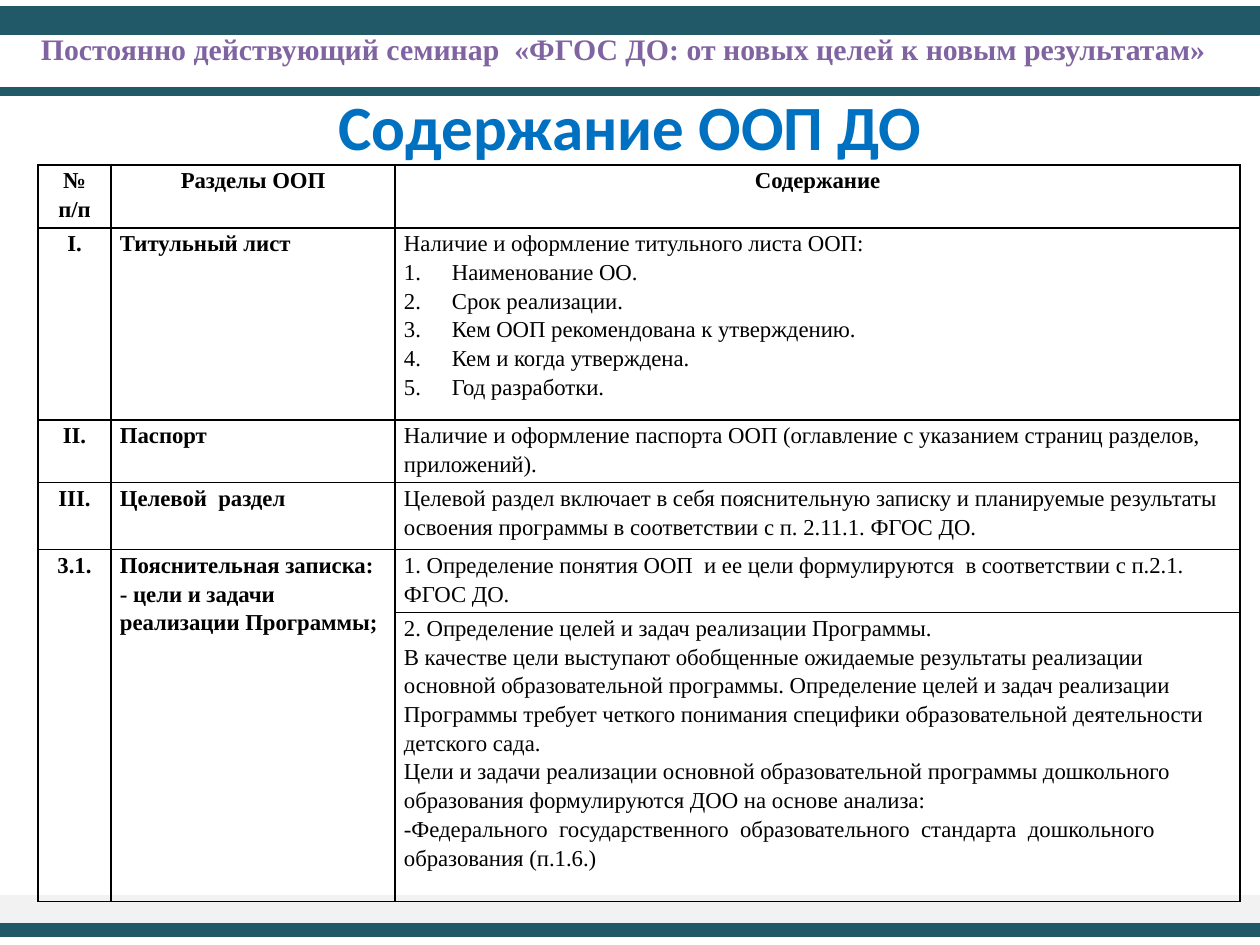
from dataclasses import dataclass

from lxml.etree import SubElement
from pptx import Presentation
from pptx.dml.color import RGBColor
from pptx.enum.shapes import MSO_SHAPE
from pptx.enum.text import MSO_ANCHOR, PP_ALIGN
from pptx.oxml.ns import qn
from pptx.util import Emu, Pt

PX = 914400 / 126
COLORS = {
    "teal": "215968",
    "light": "F2F2F2",
    "purple": "8064A2",
    "blue": "0070C0",
    "black": "000000",
}
SERIF = "Times New Roman"


@dataclass(frozen=True)
class Bar:
    x: int
    y: int
    w: int
    h: int
    color: str


@dataclass(frozen=True)
class Caption:
    x: int
    y: int
    w: int
    h: int
    text: str
    size: int
    font: str
    color: str
    anchor: MSO_ANCHOR


@dataclass(frozen=True)
class Entry:
    text: str
    bold: bool = False
    centered: bool = False
    numbered: bool = False


BARS = [
    Bar(0, 897, 1260, 38, "light"),
    Bar(0, 8, 1260, 25, "teal"),
    Bar(0, 925, 1260, 10, "teal"),
    Bar(-1, 89, 1260, 5, "teal"),
]
CAPTIONS = [
    Caption(0, 25, 1247, 87,
            "Постоянно действующий семинар  «ФГОС ДО: от новых целей к новым результатам»",
            17, SERIF, "purple", MSO_ANCHOR.TOP),
    Caption(63, 66, 1134, 118, "Содержание ООП ДО", 36, "Calibri", "blue", MSO_ANCHOR.MIDDLE),
]
COLUMNS = [73, 284, 845]
ROWS = [62, 192, 62, 67, 62, 289]


def heading(text: str) -> list[Entry]:
    return [Entry(text, bold=True, centered=True)]


def section(*texts: str) -> list[Entry]:
    return [Entry(text, bold=True) for text in texts]


def body(*texts: str) -> list[Entry]:
    return [Entry(text) for text in texts]


def numbered(*texts: str) -> list[Entry]:
    return [Entry(text, numbered=True) for text in texts]


CONTENT = [
    [heading("№ п/п"), heading("Разделы ООП"), heading("Содержание")],
    [heading("I."), section("Титульный лист"),
     body("Наличие и оформление титульного листа ООП:")
     + numbered("Наименование ОО.", "Срок реализации.",
                "Кем ООП рекомендована к утверждению.",
                "Кем и когда утверждена.", "Год разработки.")],
    [heading("II."), section("Паспорт"),
     body("Наличие и оформление паспорта ООП (оглавление с указанием страниц "
          "разделов, приложений).")],
    [heading("III."), section("Целевой  раздел"),
     body("Целевой раздел включает в себя пояснительную записку и планируемые "
          "результаты освоения программы в соответствии с п. 2.11.1. ФГОС ДО.")],
    [heading("3.1."),
     section("Пояснительная записка:", "- цели и задачи реализации Программы;"),
     body("1. Определение понятия ООП  и ее цели формулируются  в соответствии "
          "с п.2.1. ФГОС ДО.")],
    [[], [],
     body("2. Определение целей и задач реализации Программы.",
          "В качестве цели выступают обобщенные ожидаемые результаты реализации "
          "основной образовательной программы. Определение целей и задач реализации "
          "Программы требует четкого понимания специфики образовательной "
          "деятельности детского сада.",
          "Цели и задачи реализации основной образовательной программы дошкольного "
          "образования формулируются ДОО на основе анализа:",
          "-Федерального  государственного  образовательного  стандарта  "
          "дошкольного образования (п.1.6.)")],
]


def px(n: int) -> Emu:
    return Emu(round(n * PX))


def rgb(name: str) -> RGBColor:
    return RGBColor.from_string(COLORS[name])


def style(p, size: int, font: str, color: str, bold: bool) -> None:
    p.font.size, p.font.name, p.font.bold = Pt(size), font, bold
    p.font.color.rgb = rgb(color)


def draw_bar(slide, bar: Bar) -> None:
    sp = slide.shapes.add_shape(MSO_SHAPE.RECTANGLE, px(bar.x), px(bar.y), px(bar.w), px(bar.h))
    sp.shadow.inherit = False
    sp.fill.solid()
    sp.fill.fore_color.rgb = rgb(bar.color)
    sp.line.color.rgb = rgb(bar.color)
    sp.line.width = Pt(2)


def draw_caption(slide, cap: Caption) -> None:
    tf = slide.shapes.add_textbox(px(cap.x), px(cap.y), px(cap.w), px(cap.h)).text_frame
    tf.word_wrap = True
    tf.vertical_anchor = cap.anchor
    p = tf.paragraphs[0]
    p.text = cap.text
    p.alignment = PP_ALIGN.CENTER
    style(p, cap.size, cap.font, cap.color, True)


def add_borders(cell) -> None:
    """Put thin black lines on all four sides; they must precede the fill."""
    tc_pr = cell._tc.get_or_add_tcPr()
    for i, side in enumerate(("lnL", "lnR", "lnT", "lnB")):
        ln = SubElement(tc_pr, qn(f"a:{side}"), w=str(Pt(1)))
        fill = SubElement(ln, qn("a:solidFill"))
        SubElement(fill, qn("a:srgbClr"), val=COLORS["black"])
        tc_pr.insert(i, ln)


def add_number(p) -> None:
    p_pr = p._p.get_or_add_pPr()
    p_pr.set("marL", str(px(48)))
    p_pr.set("indent", str(px(-48)))
    bullet = SubElement(p_pr, qn("a:buAutoNum"), type="arabicPeriod")
    p_pr.find(qn("a:defRPr")).addprevious(bullet)


def fill_cell(cell, entries: list[Entry]) -> None:
    cell.margin_left = cell.margin_right = px(9)
    cell.margin_top = cell.margin_bottom = 0
    cell.fill.background()
    add_borders(cell)
    tf = cell.text_frame
    for i, entry in enumerate(entries):
        p = tf.add_paragraph() if i else tf.paragraphs[0]
        p.text = entry.text
        p.alignment = PP_ALIGN.CENTER if entry.centered else PP_ALIGN.LEFT
        p.line_spacing = 1.15
        style(p, 13, SERIF, "black", entry.bold)
        if entry.numbered:
            add_number(p)


def draw_table(slide) -> None:
    table = slide.shapes.add_table(len(ROWS), len(COLUMNS), px(38), px(165),
                                   px(sum(COLUMNS)), px(sum(ROWS))).table
    table.first_row = table.horz_banding = False
    for column, width in zip(table.columns, COLUMNS):
        column.width = px(width)
    for row, height, contents in zip(table.rows, ROWS, CONTENT):
        row.height = px(height)
        for cell, entries in zip(row.cells, contents):
            fill_cell(cell, entries)
    for col in (0, 1):
        table.cell(4, col).merge(table.cell(5, col))


def main() -> None:
    prs = Presentation()
    prs.slide_width, prs.slide_height = px(1260), px(945)
    slide = prs.slides.add_slide(prs.slide_layouts[6])
    for bar in BARS:
        draw_bar(slide, bar)
    for cap in CAPTIONS:
        draw_caption(slide, cap)
    draw_table(slide)
    prs.save("out.pptx")


if __name__ == "__main__":
    main()
